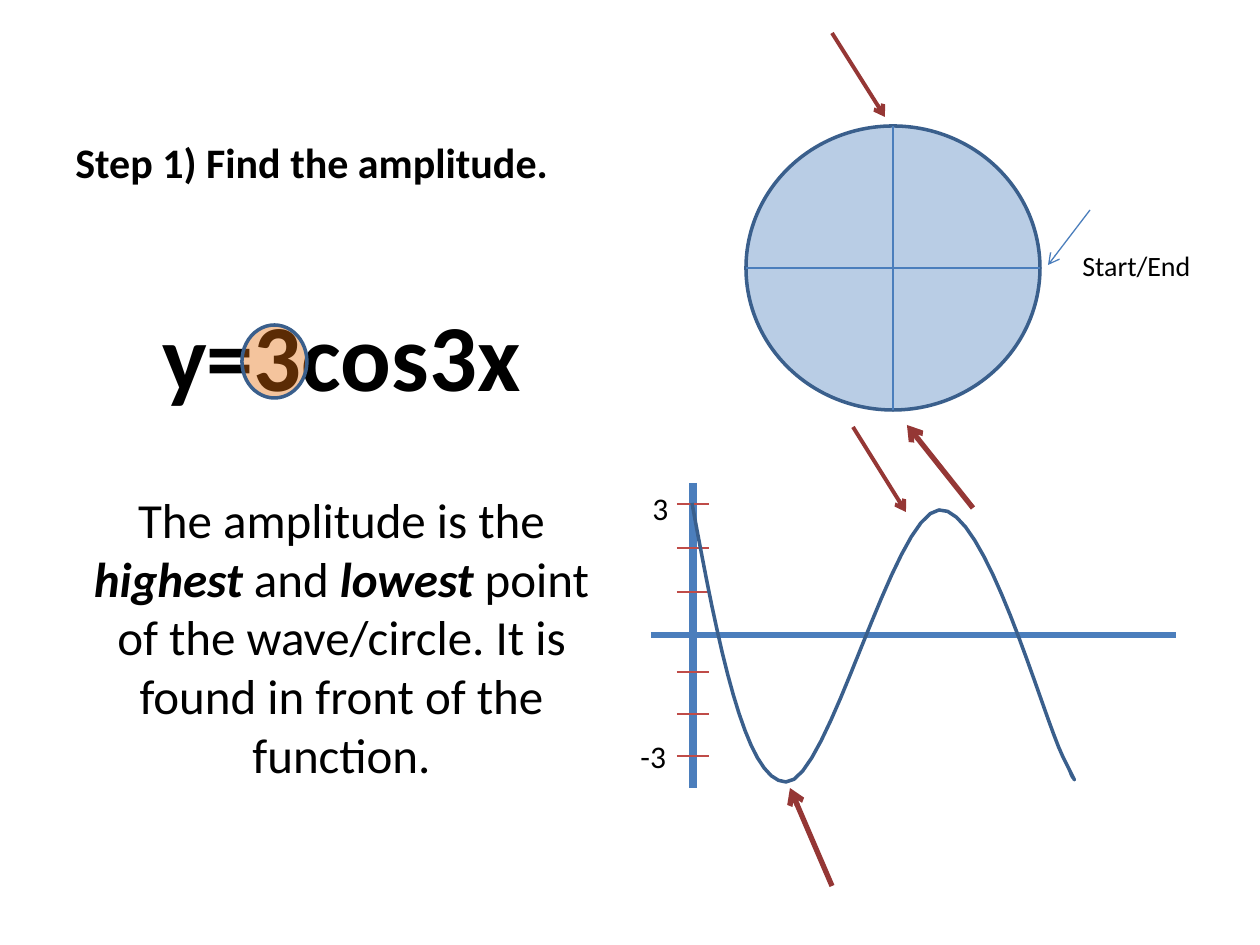
from lxml import etree
from pptx import Presentation
from pptx.dml.color import RGBColor
from pptx.enum import shapes, text
from pptx.oxml.ns import qn
from pptx.util import Emu, Pt

"""Build a slide on finding the amplitude of a cosine function."""

SCALE = 914400 / 126
BLACK = RGBColor(0x00, 0x00, 0x00)
NAVY = RGBColor(0x3A, 0x5F, 0x8C)
BLUE = RGBColor(0x4B, 0x7E, 0xBC)
PALE_BLUE = RGBColor(0xB9, 0xCD, 0xE5)
ORANGE = RGBColor(0xE4, 0x6C, 0x0A)
RED = RGBColor(0xBF, 0x4C, 0x48)
DARK_RED = RGBColor(0x95, 0x37, 0x35)

TITLE = [("Step 1) Find the amplitude.", "b")]
EQUATION = [("y=3cos3x", "b")]
EXPLANATION = [
    ("The amplitude is the ", ""),
    ("highest", "bi"),
    (" and ", ""),
    ("lowest", "bi"),
    (" point of the wave/circle. It is found in front of the function.", ""),
]
LABELS = [
    ("Start/End", (1070, 242, 158, 47), 16),
    ("3", (640, 483, 40, 50), 18),
    ("-3", (628, 731, 53, 50), 18),
]
HIGHLIGHT = (242, 325, 65, 73)
CIRCLE = (746, 126, 294, 284)
AXES = [((693, 483), (693, 788), 4.5), ((651, 635), (1176, 635), 3)]
TICK_LEFT, TICK_RIGHT = 677, 709
TICKS = [504, 548, 592, 672, 714, 756]
ARROWS = [
    ((853, 427), (906, 512), DARK_RED, 2.25),
    ((832, 886), (790, 788), DARK_RED, 3),
    ((832, 33), (885, 117), DARK_RED, 2.25),
    ((973, 508), (907, 425), DARK_RED, 3),
    ((1090, 210), (1048, 265), BLUE, 0.75),
]
WAVE_START = (692, 503)
WAVE = [
    ((718, 643), (745, 782), (786, 782)),
    ((828, 784), (893, 514), (939, 510)),
    ((985, 505), (1042, 714), (1063, 757)),
    ((1085, 801), (1068, 767), (1070, 771)),
    ((1071, 774), (1072, 776), (1073, 778)),
]
CURVE_STEPS = 16


def px(*values):
    return [Emu(round(value * SCALE)) for value in values]


def write(paragraph, runs, size, align=text.PP_ALIGN.LEFT, before=0):
    paragraph.alignment = align
    paragraph.space_before = Pt(before)
    for words, style in runs:
        run = paragraph.add_run()
        run.text = words
        run.font.name = "Calibri"
        run.font.size = Pt(size)
        run.font.color.rgb = BLACK
        run.font.bold = "b" in style
        run.font.italic = "i" in style


def add_text(slide, box, runs, size, anchor=text.MSO_ANCHOR.TOP, **layout):
    frame = slide.shapes.add_textbox(*px(*box)).text_frame
    frame.word_wrap = True
    frame.vertical_anchor = anchor
    write(frame.paragraphs[0], runs, size, **layout)
    return frame


def outline(shape):
    shape.shadow.inherit = False
    shape.line.color.rgb = NAVY
    shape.line.width = Pt(2)


def add_ellipse(slide, box, color, opacity=100):
    shape = slide.shapes.add_shape(shapes.MSO_SHAPE.OVAL, *px(*box))
    outline(shape)
    shape.fill.solid()
    shape.fill.fore_color.rgb = color
    if opacity < 100:
        fill = shape.element.spPr.find(qn("a:solidFill"))
        etree.SubElement(fill[0], qn("a:alpha"), val=str(opacity * 1000))


def add_line(slide, start, end, color, width, arrow=False):
    line = slide.shapes.add_connector(
        shapes.MSO_CONNECTOR.STRAIGHT, *px(*start, *end))
    line.line.color.rgb = color
    line.line.width = Pt(width)
    if arrow:
        etree.SubElement(line.line._get_or_add_ln(), qn("a:tailEnd"), type="arrow")
    etree.SubElement(line.element.spPr, qn("a:effectLst"))


def curve_points(start, curves):
    for first, second, end in curves:
        for step in range(1, CURVE_STEPS + 1):
            t = step / CURVE_STEPS
            yield tuple(
                (1 - t) ** 3 * a + 3 * (1 - t) ** 2 * t * b
                + 3 * (1 - t) * t ** 2 * c + t ** 3 * d
                for a, b, c, d in zip(start, first, second, end))
        start = end


def add_wave(slide):
    builder = slide.shapes.build_freeform(*px(*WAVE_START))
    points = [px(*point) for point in curve_points(WAVE_START, WAVE)]
    builder.add_line_segments(points, close=False)
    shape = builder.convert_to_shape()
    outline(shape)
    shape.fill.background()


def main():
    presentation = Presentation()
    presentation.slide_width, presentation.slide_height = px(1260, 945)
    slide = presentation.slides.add_slide(presentation.slide_layouts[6])

    add_text(slide, (63, 105, 557, 88), TITLE, 24, anchor=text.MSO_ANCHOR.BOTTOM)
    center = text.PP_ALIGN.CENTER
    body = add_text(slide, (63, 291, 557, 553), EQUATION, 54, align=center)
    write(body.add_paragraph(), EXPLANATION, 28, align=center, before=45)

    add_ellipse(slide, HIGHLIGHT, ORANGE, opacity=40)
    add_ellipse(slide, CIRCLE, PALE_BLUE)
    for start, end, width in AXES:
        add_line(slide, start, end, BLUE, width)
    for y in TICKS:
        add_line(slide, (TICK_LEFT, y), (TICK_RIGHT, y), RED, 1.5)

    left, top, width, height = CIRCLE
    middle_x, middle_y = left + width / 2, top + height / 2
    add_line(slide, (middle_x, top), (middle_x, top + height), BLUE, 0.75)
    add_line(slide, (left, middle_y), (left + width, middle_y), BLUE, 0.75)

    for start, end, color, weight in ARROWS:
        add_line(slide, start, end, color, weight, arrow=True)
    add_wave(slide)
    for words, box, size in LABELS:
        add_text(slide, box, [(words, "")], size)
    presentation.save("out.pptx")


if __name__ == "__main__":
    main()
